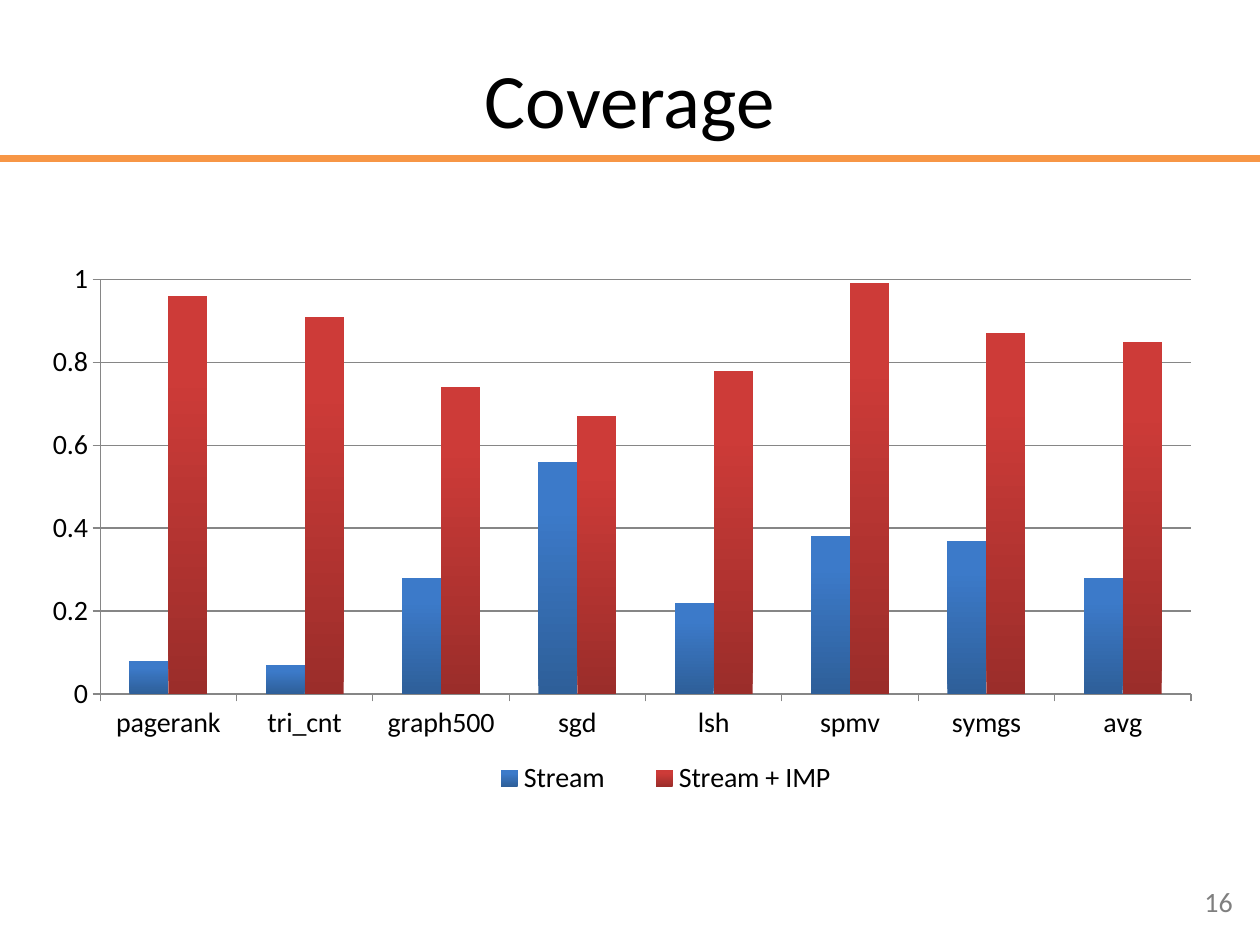
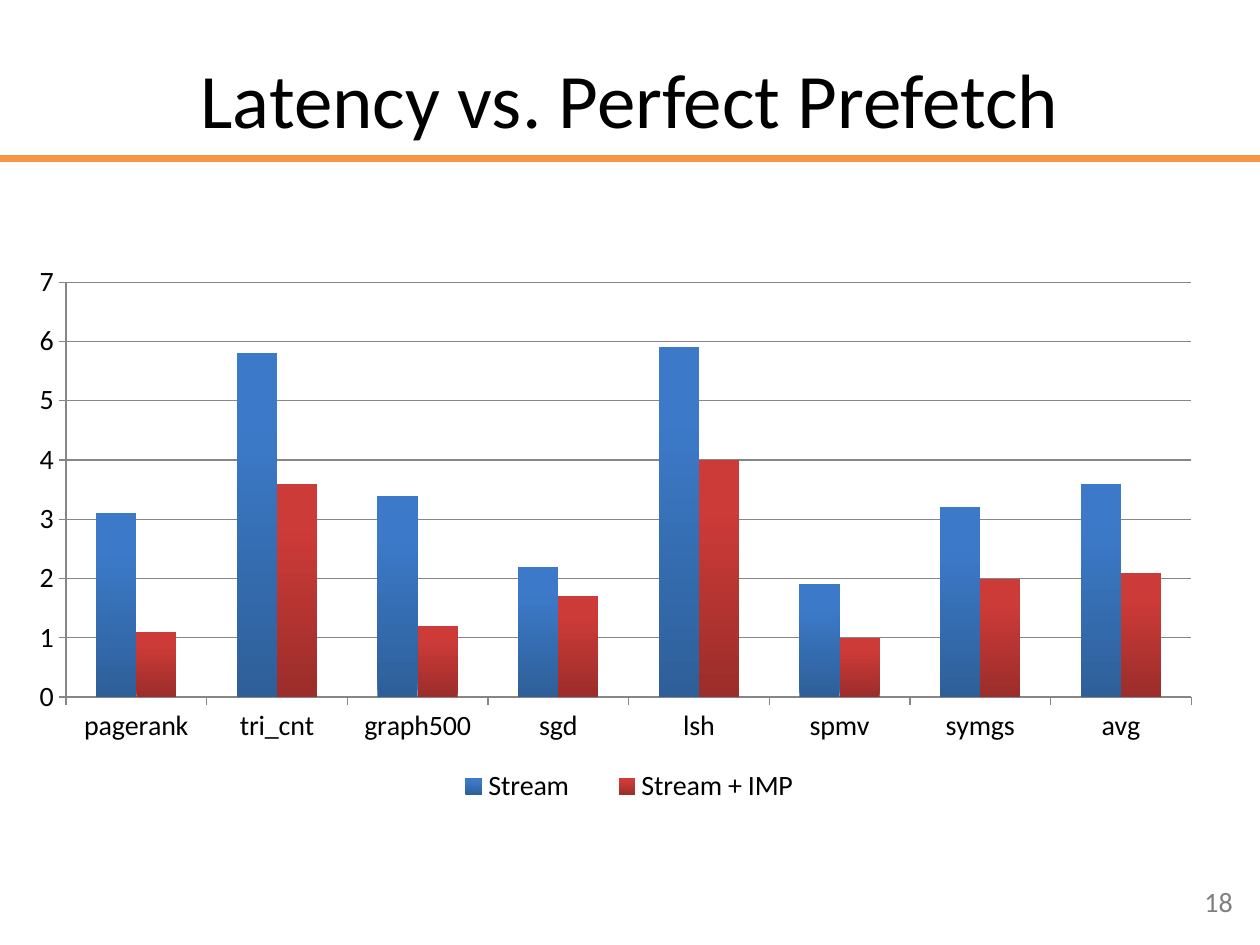
"""Build two slides comparing prefetcher coverage and latency in column charts."""
import lxml.etree
import pptx
import pptx.chart.data
import pptx.dml.color
import pptx.enum.chart
import pptx.enum.shapes
import pptx.enum.text
import pptx.oxml.ns
import pptx.util

Cm = pptx.util.Cm
Pt = pptx.util.Pt
qn = pptx.oxml.ns.qn
rgb = pptx.dml.color.RGBColor.from_string

FONT = "Calibri"
COLORS = {"text": "000000", "rule": "F79646", "number": "7F7F7F", "axis": "868686"}
BENCHMARKS = ["pagerank", "tri_cnt", "graph500", "sgd", "lsh", "spmv", "symgs", "avg"]
SERIES_GRADIENTS = {"Stream": ("2E5F99", "3C7AC9"), "Stream + IMP": ("9B2D2A", "CD3B38")}
SLIDES = [
    {
        "title": "Coverage", "number": "16",
        "frame": (0.66, 4.93, 23.85, 11.33),
        "plot": (0.057, 0.062, 0.922, 0.738), "legend": (0.36, 0.91, 0.35, 0.08),
        "maximum": 1, "step": 0.2,
        "values": [(0.08, 0.07, 0.28, 0.56, 0.22, 0.38, 0.37, 0.28),
                   (0.96, 0.91, 0.74, 0.67, 0.78, 0.99, 0.87, 0.85)],
    },
    {
        "title": "Latency vs. Perfect Prefetch", "number": "18",
        "frame": (0.58, 5.23, 24.21, 11.3),
        "plot": (0.031, 0.041, 0.937, 0.74), "legend": (0.33, 0.9, 0.34, 0.08),
        "maximum": 7, "step": 1,
        "values": [(3.1, 5.8, 3.4, 2.2, 5.9, 1.9, 3.2, 3.6),
                   (1.1, 3.6, 1.2, 1.7, 4, 1, 2, 2.1)],
    },
]


def add_text(slide, text, box, size, color, alignment):
    """Add one vertically centred line of text."""
    text_frame = slide.shapes.add_textbox(*map(Cm, box)).text_frame
    text_frame.word_wrap = True
    text_frame.vertical_anchor = pptx.enum.text.MSO_ANCHOR.MIDDLE
    text_frame.text = text
    paragraph = text_frame.paragraphs[0]
    paragraph.alignment = alignment
    font = paragraph.runs[0].font
    font.name, font.size = FONT, Pt(size)
    font.color.rgb = rgb(COLORS[color])


def make_layout(box, inner=False):
    """Return a manual chart layout for a box given as chart fractions."""
    layout = lxml.etree.Element(qn("c:layout"))
    manual = lxml.etree.SubElement(layout, qn("c:manualLayout"))
    settings = [("layoutTarget", "inner")] if inner else []
    settings += [("xMode", "edge"), ("yMode", "edge"), *zip("xywh", map(str, box))]
    for name, value in settings:
        lxml.etree.SubElement(manual, qn(f"c:{name}"), val=value)
    return layout


presentation = pptx.Presentation()
presentation.slide_width, presentation.slide_height = Cm(25.4), Cm(19.05)

for content in SLIDES:
    slide = presentation.slides.add_slide(presentation.slide_layouts[6])
    rule = slide.shapes.add_connector(
        pptx.enum.shapes.MSO_CONNECTOR.STRAIGHT, 0, Cm(3.2), Cm(25.4), Cm(3.2))
    rule.line.color.rgb = rgb(COLORS["rule"])
    rule.line.width = Pt(4)
    lxml.etree.SubElement(rule._element.spPr, qn("a:effectLst"))

    add_text(slide, content["title"], (1.27, 0.76, 22.86, 2.41), 44, "text",
             pptx.enum.text.PP_ALIGN.CENTER)
    add_text(slide, content["number"], (19.18, 17.65, 5.92, 1.02), 16, "number",
             pptx.enum.text.PP_ALIGN.RIGHT)

    chart_data = pptx.chart.data.CategoryChartData()
    chart_data.categories = BENCHMARKS
    for name, values in zip(SERIES_GRADIENTS, content["values"]):
        chart_data.add_series(name, values)
    chart = slide.shapes.add_chart(
        pptx.enum.chart.XL_CHART_TYPE.COLUMN_CLUSTERED,
        *map(Cm, content["frame"]), chart_data).chart
    chart.has_title = False
    chart.font.name, chart.font.size = FONT, Pt(16)
    chart.font.color.rgb = rgb(COLORS["text"])

    plot = chart.plots[0]
    plot.gap_width, plot.overlap = 150, 0
    plot.vary_by_categories = False
    for series, (dark, light) in zip(plot.series, SERIES_GRADIENTS.values()):
        fill = series.format.fill
        fill.gradient()
        fill.gradient_angle = 90
        for stop, color, position in zip(fill.gradient_stops, (dark, light), (0, 0.8)):
            stop.color.rgb = rgb(color)
            stop.position = position

    value_axis = chart.value_axis
    value_axis.minimum_scale, value_axis.maximum_scale = 0, content["maximum"]
    value_axis.major_unit = content["step"]
    value_axis.has_major_gridlines = True
    for lined in (value_axis, chart.category_axis, value_axis.major_gridlines):
        lined.format.line.color.rgb = rgb(COLORS["axis"])
        lined.format.line.width = Pt(0.75)
    for axis in (value_axis, chart.category_axis):
        axis.major_tick_mark = pptx.enum.chart.XL_TICK_MARK.OUTSIDE

    chart.has_legend = True
    chart.legend.position = pptx.enum.chart.XL_LEGEND_POSITION.RIGHT
    chart.legend.include_in_layout = False
    chart_space = chart._chartSpace
    for layout in list(chart_space.iter(qn("c:layout"))):
        layout.getparent().remove(layout)
    chart_space.find(f".//{qn('c:plotArea')}").insert(0, make_layout(content["plot"], inner=True))
    chart_space.find(f".//{qn('c:legendPos')}").addnext(make_layout(content["legend"]))

presentation.save("out.pptx")
